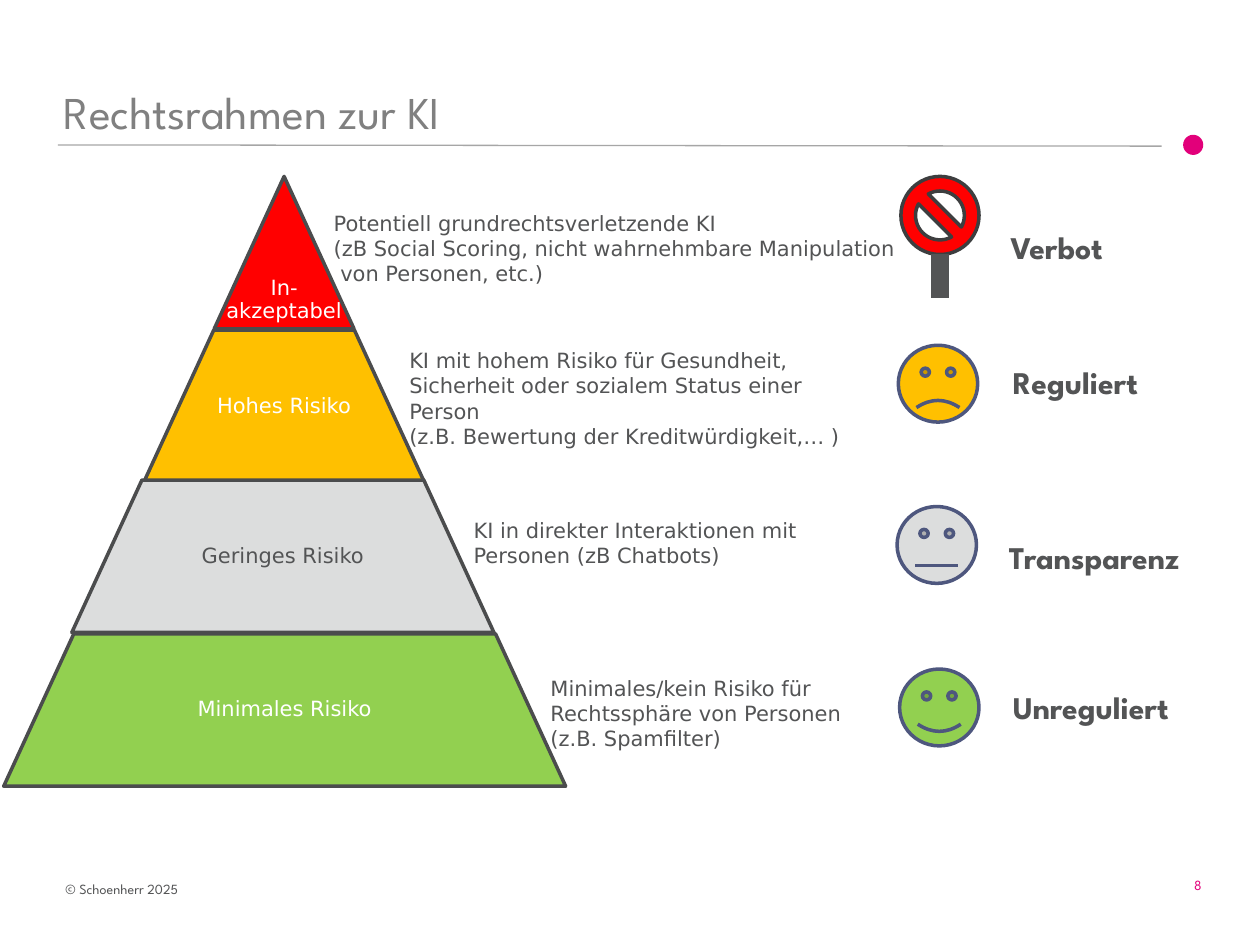
from lxml.etree import SubElement
from pptx import Presentation
from pptx.dml.color import RGBColor
from pptx.enum.shapes import MSO_CONNECTOR, MSO_SHAPE
from pptx.enum.text import MSO_ANCHOR, PP_ALIGN
from pptx.oxml.ns import qn
from pptx.util import Inches, Pt

BODY, HEAD = "DejaVu Sans", "League Spartan"
TEXT, WHITE, PINK = "535455", "FFFFFF", "E2007A"
RED, AMBER, GREY, GREEN = "FF0000", "FFC000", "DCDDDD", "92D050"
EDGE, FACE = "4B4C4D", "4E577E"


def color(code):
    return RGBColor.from_string(code)


class Painter:
    def __init__(self, slide):
        self.slide = slide

    def shape(self, kind, box, fill, line=None, adj=None, turn=0):
        item = self.slide.shapes.add_shape(kind, *map(Inches, box))
        item.shadow.inherit = False
        item.fill.solid()
        item.fill.fore_color.rgb = color(fill)
        if line:
            item.line.color.rgb = color(line)
            item.line.width = Pt(2)
        else:
            item.line.fill.background()
        if adj is not None:
            item.adjustments[0] = adj
        item.rotation = turn

    def line(self, start, end, code, width):
        item = self.slide.shapes.add_connector(
            MSO_CONNECTOR.STRAIGHT, *map(Inches, start + end))
        item.line.color.rgb = color(code)
        item.line.width = Pt(width)
        SubElement(item._element.spPr, qn("a:effectLst"))

    def text(self, box, lines, size=12, font=BODY, code=TEXT, bold=False,
             anchor=MSO_ANCHOR.TOP, align=PP_ALIGN.LEFT, pad=None, space=None):
        frame = self.slide.shapes.add_textbox(*map(Inches, box)).text_frame
        frame.word_wrap = True
        frame.vertical_anchor = anchor
        if pad is not None:
            frame.margin_left = frame.margin_right = Inches(0.02)
            frame.margin_top = frame.margin_bottom = Inches(pad)
        frame.text = "\n".join(lines)
        for para in frame.paragraphs:
            para.alignment = align
            para.line_spacing = space
            para.font.name = font
            para.font.size = Pt(size)
            para.font.bold = bold
            para.font.color.rgb = color(code)


def main():
    deck = Presentation()
    deck.slide_width, deck.slide_height = Inches(10), Inches(7.5)
    pen = Painter(deck.slides.add_slide(deck.slide_layouts[6]))

    # Title, rule and footer
    pen.text((0.41, 0.6, 8.86, 0.55), ["Rechtsrahmen zur KI"], 26, HEAD,
             "808080", anchor=MSO_ANCHOR.BOTTOM)
    pen.line((0.46, 1.15), (9.22, 1.16), "A6A6A6", 0.75)
    pen.shape(MSO_SHAPE.OVAL, (9.39, 1.07, 0.16, 0.16), PINK)
    pen.text((0.42, 6.94, 2.2, 0.24), ["© Schoenherr 2025"], 8, HEAD)
    pen.text((9.38, 6.91, 0.34, 0.24), ["8"], 8, HEAD, PINK)

    # Risk pyramid: left, top, width, slope, fill, label, label colour
    tiers = [
        (1.7, 1.4, 1.11, 0.5, RED, "In-akzeptabel", WHITE),
        (1.14, 2.62, 2.23, 0.46, AMBER, "Hohes Risiko", WHITE),
        (0.57, 3.81, 3.35, 0.46, GREY, "Geringes Risiko", TEXT),
        (0.03, 5.03, 4.46, 0.46, GREEN, "Minimales Risiko", WHITE),
    ]
    for left, top, width, slope, fill, label, code in tiers:
        box = (left, top, width, 1.21)
        peak = fill == RED
        pen.shape(MSO_SHAPE.TRAPEZOID, box, fill, EDGE, slope)
        pen.text(box, [label], code=code, align=PP_ALIGN.CENTER, space=0.9,
                 anchor=MSO_ANCHOR.BOTTOM if peak else MSO_ANCHOR.MIDDLE,
                 pad=0.05 if peak else 0.02)

    # Descriptions
    notes = [
        ((2.55, 1.62, 4.74, 1.01),
         ["Potentiell grundrechtsverletzende KI",
          "(zB Social Scoring, nicht wahrnehmbare Manipulation",
          " von Personen, etc.)"]),
        ((3.15, 2.71, 3.74, 1.31),
         ["KI mit hohem Risiko für Gesundheit, Sicherheit oder sozialem "
          "Status einer Person",
          "(z.B. Bewertung der Kreditwürdigkeit,… )"]),
        ((3.66, 4.06, 5.79, 0.71),
         ["KI in direkter Interaktionen mit", "Personen (zB Chatbots)"]),
        ((4.27, 5.31, 4.25, 0.93),
         ["Minimales/kein Risiko für", "Rechtssphäre von Personen",
          "(z.B. Spamfilter)"]),
    ]
    for box, lines in notes:
        pen.text(box, lines)

    # Outcomes
    for left, top, width, word in [
        (7.92, 1.76, 1.2, "Verbot"),
        (7.94, 2.83, 1.28, "Reguliert"),
        (7.91, 4.22, 1.76, "Transparenz"),
        (7.94, 5.41, 1.55, "Unreguliert"),
    ]:
        pen.text((left, top, width, 0.4), [word], 18, HEAD, bold=True)

    # Faces, from frown to smile
    for left, top, fill, smile in [
        (7.13, 2.74, AMBER, -0.05),
        (7.12, 4.02, GREY, 0),
        (7.14, 5.31, GREEN, 0.05),
    ]:
        pen.shape(MSO_SHAPE.SMILEY_FACE, (left, top, 0.63, 0.61), fill, FACE,
                  smile)

    # Ban sign on its post
    pen.shape(MSO_SHAPE.NO_SYMBOL, (7.15, 1.4, 0.62, 0.62), RED, "3D3E3F")
    pen.shape(MSO_SHAPE.MATH_MINUS, (7.22, 1.9, 0.48, 0.58), TEXT, turn=90)

    deck.save("out.pptx")


if __name__ == "__main__":
    main()
